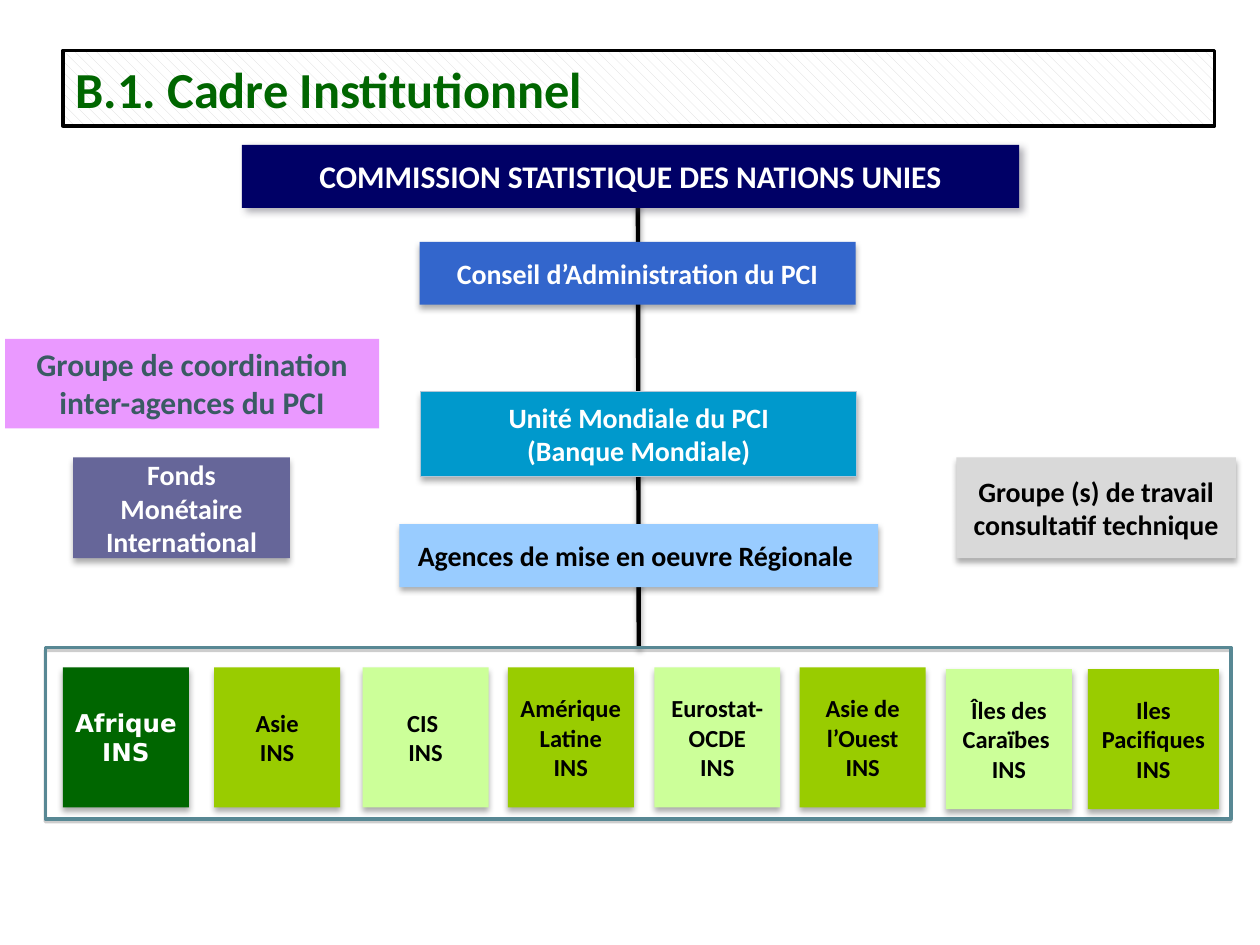
from lxml import etree
from pptx import Presentation
from pptx.dml.color import RGBColor
from pptx.enum.dml import MSO_PATTERN
from pptx.enum.shapes import MSO_CONNECTOR, MSO_SHAPE
from pptx.enum.text import MSO_ANCHOR, PP_ALIGN
from pptx.oxml import parse_xml
from pptx.oxml.ns import qn
from pptx.util import Pt

DRAWING = "http://schemas.openxmlformats.org/drawingml/2006/main"
SOFT = ("000000", 32, 3.5, 2.2, 90)  # colour, opacity %, blur, distance, angle

deck = Presentation()
deck.slide_width, deck.slide_height = Pt(720), Pt(540)
page = deck.slides.add_slide(deck.slide_layouts[6])
color = RGBColor.from_string


def set_shadow(item, shadow):
    """Replace the theme shadow by the given one, or by none."""
    effects = item._element.spPr.find(qn("a:effectLst"))
    if effects is None:
        effects = etree.SubElement(item._element.spPr, qn("a:effectLst"))
    if shadow:
        tint, opacity, blur, distance, angle = shadow
        effects.append(parse_xml(
            f'<a:outerShdw xmlns:a="{DRAWING}" blurRad="{Pt(blur)}" dist="{Pt(distance)}" '
            f'dir="{angle * 60000}" algn="ctr" rotWithShape="0"><a:srgbClr val="{tint}">'
            f'<a:alpha val="{opacity * 1000}"/></a:srgbClr></a:outerShdw>'))


def add_box(place, text="", fill=None, ink="000000", size=16, line=None, shadow=SOFT,
            font="Calibri", inset=7.2, align=PP_ALIGN.CENTER):
    box = page.shapes.add_shape(MSO_SHAPE.RECTANGLE, *map(Pt, place))
    box.shadow.inherit = False
    if fill:
        box.fill.solid()
        box.fill.fore_color.rgb = color(fill)
    else:
        box.fill.background()
    if line:
        box.line.color.rgb, box.line.width = color(line[0]), Pt(line[1])
    else:
        box.line.fill.background()
    set_shadow(box, shadow)
    frame = box.text_frame
    frame.word_wrap = True
    frame.vertical_anchor = MSO_ANCHOR.MIDDLE
    frame.margin_left = frame.margin_right = Pt(inset)
    frame.margin_top = frame.margin_bottom = Pt(3.6)
    frame.text = text
    for para in frame.paragraphs:
        para.alignment = align
        para.font.name, para.font.size, para.font.bold = font, Pt(size), True
        para.font.color.rgb = color(ink)
    return box


title = add_box((36, 28.8, 658, 43.2), "B.1. Cadre Institutionnel", ink="006600", size=28.8,
                line=("000000", 2), shadow=None, align=PP_ALIGN.LEFT)
title.fill.patterned()
title.fill.pattern = MSO_PATTERN.DASHED_DOWNWARD_DIAGONAL
title.fill.fore_color.rgb = color("D9D9D9")
title.fill.back_color.rgb = color("FFFFFF")

trunk = page.shapes.add_connector(MSO_CONNECTOR.STRAIGHT, Pt(364.5), Pt(100.8), Pt(365), Pt(370))
trunk.line.color.rgb, trunk.line.width = color("000000"), Pt(2.5)
set_shadow(trunk, ("000000", 35, 3.1, 1.8, 90))

# Hierarchy from top to bottom
add_box((138.2, 82.8, 444.2, 36), "COMMISSION STATISTIQUE DES NATIONS UNIES", "000066", "FFFFFF",
        size=18, shadow=("373545", 40, 4, 3, 45))
add_box((239.8, 138.2, 249.1, 36), "Conseil d’Administration du PCI", "3366CC", "FFFFFF")
add_box((240.5, 223.9, 249.1, 48.2), "Unité Mondiale du PCI\n(Banque Mondiale)", "0099CC",
        "FFFFFF", line=("B1C6D7", 0.5))
add_box((228.2, 299.5, 273.6, 36), "Agences de mise en oeuvre Régionale ", "99CCFF")

# Bodies on either side
add_box((546.5, 261.4, 159.8, 57.6), "Groupe (s) de travail consultatif technique", "D9D9D9")
add_box((41.8, 261.4, 123.8, 57.6), "Fonds Monétaire International", "666699", "FFFFFF")
coordination = add_box((2.9, 193.7, 213.8, 51.1), "Groupe de coordination inter-agences du PCI",
                       "CC00FF", "3A5B63", size=18, shadow=None)
coordination.text_frame.vertical_anchor = MSO_ANCHOR.TOP
tint = coordination._element.spPr.find(qn("a:solidFill"))[0]
etree.SubElement(tint, qn("a:alpha"), val="40000")

# Regions
add_box((25.9, 370, 677.5, 98), line=("588894", 2), shadow=("808080", 38, 0, 1.6, 90))
DARK, LIME, PALE = "006600", "99CC00", "CCFF99"
regions = [
    (36, "Afrique INS", DARK, 3.6),
    (122.4, "Asie\nINS", LIME, 7.2),
    (207.2, "CIS \nINS", PALE, 3.6),
    (290.2, "Amérique Latine\nINS", LIME, 7.2),
    (373.9, "Eurostat-OCDE\nINS", PALE, 3.6),
    (457, "Asie de l’Ouest\nINS", LIME, 7.2),
    (540.6, "Îles des Caraïbes \nINS", PALE, 3.6),
    (621.6, "Iles Pacifiques\vINS", LIME, 7.2),
]
for left, text, fill, inset in regions:
    top = 382.4 if left > 500 else 381.4
    width = 75 if left > 600 else 72
    dark = fill == DARK
    add_box((left, top, width, 80), text, fill, "FFFFFF" if dark else "000000", size=14,
            font="DejaVu Sans" if dark else "Calibri", inset=inset)

deck.save("out.pptx")
